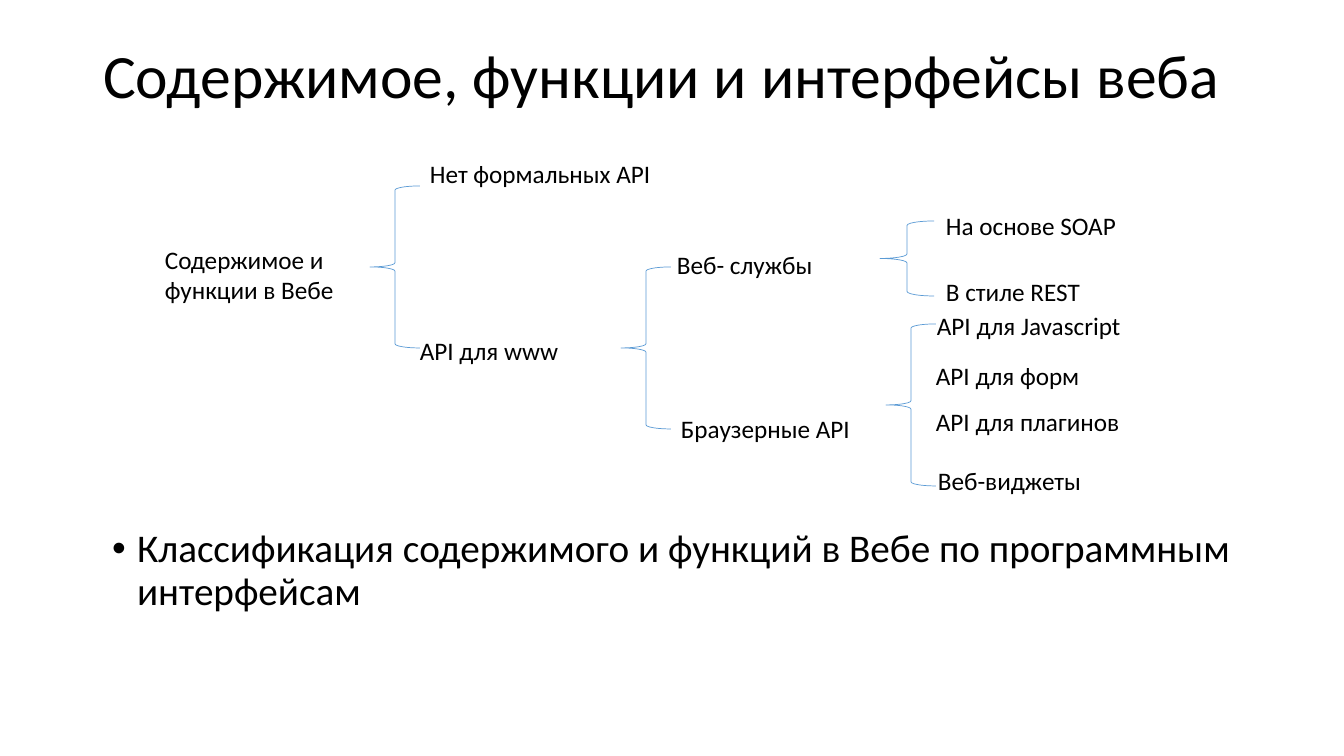
from pptx import Presentation
from pptx.dml.color import RGBColor
from pptx.enum.shapes import MSO_SHAPE
from pptx.enum.text import MSO_ANCHOR, MSO_AUTO_SIZE, PP_ALIGN
from pptx.util import Emu, Pt

TITLE = "Содержимое, функции и интерфейсы веба"
BODY = "Классификация содержимого и функций в Вебе по программным интерфейсам"
LABELS = [
    ("Содержимое и функции в Вебе", 155, 239, 240, 72),
    ("Нет формальных API", 420, 153, 338, 40),
    ("API для www", 410, 330, 338, 40),
    ("Веб- службы", 667, 244, 338, 40),
    ("Браузерные API", 671, 408, 338, 40),
    ("На основе SOAP", 936, 205, 338, 40),
    ("В стиле REST", 936, 271, 338, 40),
    ("API для Javascript", 927, 305, 338, 40),
    ("API для форм", 926, 355, 208, 40),
    ("API для плагинов", 926, 401, 335, 40),
    ("Веб-виджеты", 928, 460, 208, 40),
]
BRACES = [
    (370, 186, 50, 162),
    (621, 267, 50, 162),
    (886, 324, 50, 162),
    (880, 221, 54, 75),
]

BLACK = RGBColor(0x00, 0x00, 0x00)
BLUE = RGBColor(0x5B, 0x9B, 0xD5)
FONT = "Calibri"
BRACE = MSO_SHAPE.LEFT_BRACE
TOP = MSO_ANCHOR.TOP
LEFT = PP_ALIGN.LEFT
FIXED = MSO_AUTO_SIZE.NONE
SCALE = 914400 / 100.8


def px(num):
    return Emu(round(num * SCALE))


def place(shape, *box):
    shape.left, shape.top, shape.width, shape.height = map(px, box)


def write(shape, text, size, space=1.0):
    frame = shape.text_frame
    frame.text = text
    frame.word_wrap = True
    frame.auto_size = FIXED
    frame.vertical_anchor = TOP
    para = frame.paragraphs[0]
    para.alignment = LEFT
    para.line_spacing = space
    font = para.runs[0].font
    font.name = FONT
    font.size = Pt(size)
    font.color.rgb = BLACK
    return para


deck = Presentation()
deck.slide_width = px(1344)
deck.slide_height = px(756)
slide = deck.slides.add_slide(deck.slide_layouts[1])
title, body = slide.placeholders

place(title, 93, 40, 1159, 146)
write(title, TITLE, 44, 0.9)

place(body, 102, 524, 1159, 96)
para = write(body, BODY, 28, 0.9)
para.space_before = Pt(10)
props = para._p.get_or_add_pPr()
props.set("marL", str(px(25)))
props.set("indent", str(-px(25)))

for box in BRACES:
    brace = slide.shapes.add_shape(BRACE, *map(px, box))
    brace.shadow.inherit = False
    brace.fill.background()
    brace.line.color.rgb = BLUE
    brace.line.width = Pt(0.5)

for text, *box in LABELS:
    label = slide.shapes.add_textbox(*map(px, box))
    write(label, text, 18)

deck.save("out.pptx")
